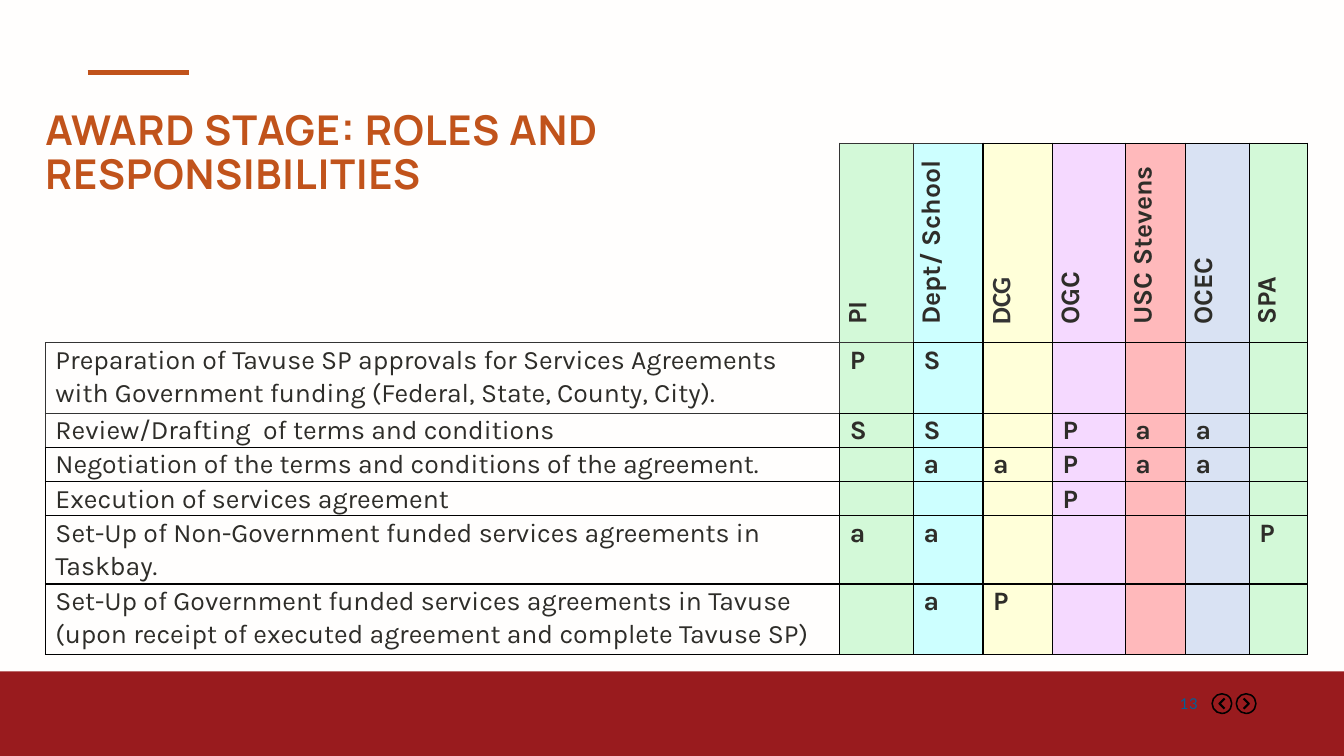
from lxml.etree import SubElement
from pptx import Presentation
from pptx.dml.color import RGBColor
from pptx.enum.shapes import MSO_CONNECTOR, MSO_SHAPE
from pptx.enum.text import MSO_ANCHOR, PP_ALIGN
from pptx.oxml.ns import qn
from pptx.util import Inches, Pt

BLACK, CHARCOAL, INK, ORANGE = "000000", "343434", "2E2D29", "C1531B"
EDGES = {"L": (0, -1), "R": (0, 1), "T": (-1, 0), "B": (1, 0)}

ROLES = [
    ("PI", 5.48, "D3F9D8"),
    ("Dept/ School", 5.18, "CDFFFF"),
    ("DCG", 5.18, "FFFFD9"),
    ("OGC", 5.4, "F5D9FF"),
    ("USC Stevens", 4.5, "FFB9BB"),
    ("OCEC", 4.73, "D9E2F3"),
    ("SPA", 4.35, "D3F9D8"),
]
TASKS = [
    ("Preparation of Tavuse SP approvals for Services Agreements with "
     "Government funding (Federal, State, County, City).", 9.33, "PS-----"),
    ("Review/Drafting  of terms and conditions", 4.27, "SS-Paa-"),
    ("Negotiation of the terms and conditions of the agreement.", 4.27, "-aaPaa-"),
    ("Execution of services agreement", 4.27, "---P---"),
    ("Set-Up of Non-Government funded services agreements in Taskbay.", 6.13, "aa----P"),
    ("Set-Up of Government funded services agreements in Tavuse "
     "(upon receipt of executed agreement and complete Tavuse SP)", 9.33, "-aP----"),
]


def color(value):
    """Turn a hex string into a colour."""
    return RGBColor.from_string(value)


def write(para, text, size=19, face="Karla", ink=INK, bold=False, tracking=0,
          align=PP_ALIGN.LEFT, spacing=None, after=0, indent=0):
    """Add formatted text to a paragraph."""
    if indent:
        properties = para._p.get_or_add_pPr()
        properties.set("marL", str(Inches(indent)))
        properties.set("indent", "0")
    para.alignment = align
    para.space_before, para.space_after = Pt(0), Pt(after)
    if spacing:
        para.line_spacing = spacing
    span = para.add_run()
    span.text = text
    span.font.size, span.font.name, span.font.bold = Pt(size), face, bold
    span.font.color.rgb = color(ink)
    if tracking:
        span._r.get_or_add_rPr().set("spc", str(round(tracking * 100)))


class SlideBuilder:
    """Hold the current slide and place elements by percent of its size."""

    def __init__(self, deck, background):
        """Add a page with a plain background."""
        self.width, self.height = deck.slide_width, deck.slide_height
        self.page = deck.slides.add_slide(deck.slide_layouts[5])
        self.page.background.fill.solid()
        self.page.background.fill.fore_color.rgb = color(background)

    def across(self, share):
        """Convert a percent of the slide width."""
        return round(self.width * share / 100)

    def down(self, share):
        """Convert a percent of the slide height."""
        return round(self.height * share / 100)

    def area(self, left, top, width, height):
        """Convert a rectangle given in percents."""
        return self.across(left), self.down(top), self.across(width), self.down(height)

    def band(self, *place, fill):
        """Draw a filled rectangle without an outline."""
        box = self.page.shapes.add_shape(MSO_SHAPE.RECTANGLE, *self.area(*place))
        box.shadow.inherit = False
        box.fill.solid()
        box.fill.fore_color.rgb = color(fill)
        box.line.fill.background()

    def rule(self, left, right, top, ink, weight):
        """Draw a horizontal line."""
        line = self.page.shapes.add_connector(
            MSO_CONNECTOR.STRAIGHT, self.across(left), self.down(top),
            self.across(right), self.down(top))
        line.line.color.rgb, line.line.width = color(ink), Pt(weight)
        SubElement(line._element.spPr, qn("a:effectLst"))

    def fill_frame(self, frame, lines, **style):
        """Write lines as paragraphs into a frame without insets."""
        frame.margin_left = frame.margin_right = 0
        frame.margin_top = frame.margin_bottom = 0
        frame.word_wrap, frame.vertical_anchor = True, MSO_ANCHOR.TOP
        for index, text in enumerate(lines):
            para = frame.add_paragraph() if index else frame.paragraphs[0]
            write(para, text, **style)

    def title(self, *place, lines):
        """Place the slide title."""
        box = self.page.shapes.title
        box.left, box.top, box.width, box.height = self.area(*place)
        self.fill_frame(box.text_frame, lines, size=29.3, face="Manrope",
                        ink=ORANGE, bold=True, tracking=0.7, spacing=0.9)

    def label(self, *place, text, **style):
        """Place a small text box."""
        box = self.page.shapes.add_textbox(*self.area(*place))
        self.fill_frame(box.text_frame, [text], **style)

    def arrow_button(self, center, middle, direction):
        """Draw a ringed chevron pointing left (-1) or right (1)."""
        ring = self.page.shapes.add_shape(
            MSO_SHAPE.OVAL, *self.area(center - 0.73, middle - 1.3, 1.46, 2.6))
        tip = 0.19 * direction
        points = [(self.across(center + x), self.down(middle + y))
                  for x, y in ((-tip, -0.67), (tip, 0), (-tip, 0.67))]
        path = self.page.shapes.build_freeform(*points[0])
        path.add_line_segments(points[1:], close=False)
        for shape, weight in ((ring, 1.1), (path.convert_to_shape(), 1.5)):
            shape.shadow.inherit = False
            shape.fill.background()
            shape.line.color.rgb, shape.line.width = color(BLACK), Pt(weight)

    def borders(self, cell, row, column):
        """Outline a cell, charcoal near the header corner and black elsewhere."""
        for side, (step_down, step_across) in EDGES.items():
            edge = SubElement(cell._tc.get_or_add_tcPr(), qn("a:ln" + side), w=str(Pt(1)))
            if row + column == 0 and side in "LT":
                SubElement(edge, qn("a:noFill"))
                continue
            near = min(row + column, row + step_down + column + step_across) < 2
            paint = SubElement(edge, qn("a:solidFill"))
            SubElement(paint, qn("a:srgbClr"), val=CHARCOAL if near else BLACK)

    def matrix(self, left, top, roles, tasks):
        """Build the table of tasks against roles."""
        widths = [59.11] + [width for _, width, _ in roles]
        heights = [26.4] + [height for _, height, _ in tasks]
        rows = [["", *(name for name, _, _ in roles)]]
        rows += [[task, *marks.replace("-", " ")] for task, _, marks in tasks]
        table = self.page.shapes.add_table(
            len(rows), len(widths),
            *self.area(left, top, sum(widths), sum(heights))).table
        table.first_row = table.horz_banding = False
        for column, width in zip(table.columns, widths):
            column.width = self.across(width)
        for row, height in zip(table.rows, heights):
            row.height = self.down(height)
        for row, texts in enumerate(rows):
            for column, text in enumerate(texts):
                cell = table.cell(row, column)
                cell.margin_left = cell.margin_right = Inches(0.1)
                cell.margin_top = cell.margin_bottom = 0
                self.borders(cell, row, column)
                if column:
                    cell.fill.solid()
                    cell.fill.fore_color.rgb = color(roles[column - 1][2])
                else:
                    cell.fill.background()
                style = {"bold": column > 0, "spacing": 1.07, "after": 8}
                if row == 0 and column:
                    cell._tc.get_or_add_tcPr().set("vert", "vert270")
                    style["indent"] = 0.08
                if text == "DCG":
                    style.update(face="Calibri", ink=CHARCOAL)
                if text.strip():
                    write(cell.text_frame.paragraphs[0], text, **style)


def main():
    """Build the roles and responsibilities slide."""
    deck = Presentation()
    deck.slide_width, deck.slide_height = Inches(13.33), Inches(7.5)
    slide = SlideBuilder(deck, "FFFEFD")
    slide.band(0, 88.8, 100, 11.2, fill="991B1E")
    slide.rule(6.53, 14.03, 9.6, ORANGE, 4)
    slide.label(86.87, 91.87, 2.25, 2.4, text="13", size=10.7, face="Lato",
                ink="006098", tracking=0.4, align=PP_ALIGN.RIGHT)
    slide.arrow_button(90.92, 93.07, -1)
    slide.arrow_button(92.72, 93.07, 1)
    slide.title(3.38, 14.53, 87.02, 7.47,
                lines=["AWARD STAGE: ROLES AND", "RESPONSIBILITIES"])
    slide.matrix(3.38, 18.93, ROLES, TASKS)
    deck.save("out.pptx")


if __name__ == "__main__":
    main()
